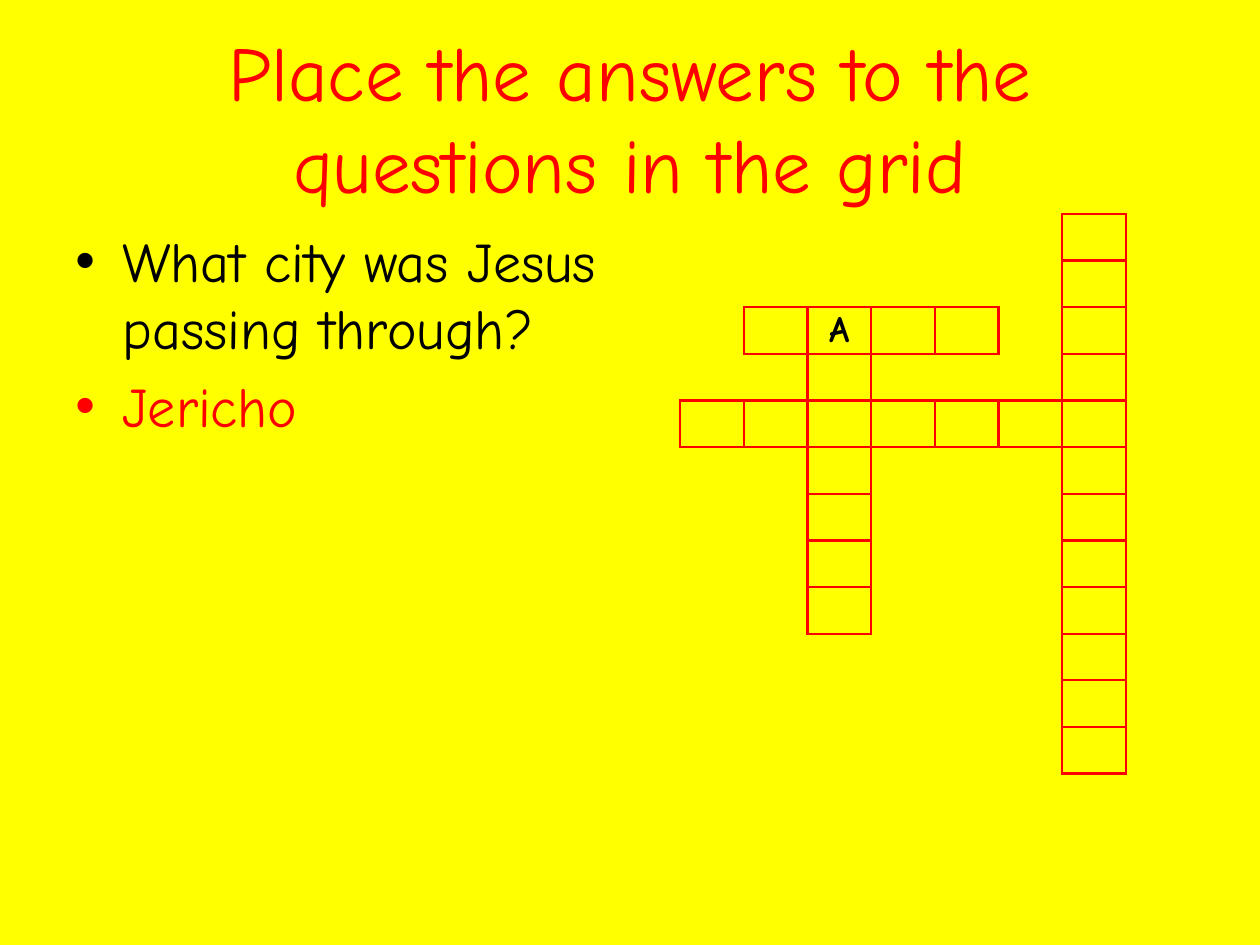
from lxml.etree import SubElement
from pptx import Presentation
from pptx.dml.color import RGBColor
from pptx.enum.text import MSO_ANCHOR, MSO_AUTO_SIZE, PP_ALIGN
from pptx.oxml.ns import qn
from pptx.util import Emu, Pt

EMU_PER_PX = 914400 / 126
YELLOW, RED, BLACK = "FFFF00", "FF0000", "000000"
ROWS, COLS = 12, 7
# Each word: first row, first column, row step, column step, length
WORDS = [(2, 1, 0, 1, 4), (4, 0, 0, 1, 7), (2, 2, 1, 0, 7), (0, 6, 1, 0, 12)]
LETTERS = {(2, 2): "A"}
SIDES = {"a:lnL": (0, -1), "a:lnR": (0, 1), "a:lnT": (-1, 0), "a:lnB": (1, 0)}


def px(n):
    return Emu(round(n * EMU_PER_PX))


def color(value):
    return RGBColor.from_string(value)


def apply(obj, values):
    for name, value in values.items():
        setattr(obj, name, value)


class SlideBuilder:
    font = "Comic Neue"

    def __init__(self, prs, background):
        self.s = prs.slides.add_slide(prs.slide_layouts[5])
        fill = self.s.background.fill
        fill.solid()
        fill.fore_color.rgb = color(background)

    def add_text(self, p, text, size, ink, bold=False):
        r = p.add_run()
        r.text = text
        apply(r.font, {"name": self.font, "size": Pt(size), "bold": bold})
        r.font.color.rgb = color(ink)

    def place(self, sp, box):
        apply(sp, dict(zip(("left", "top", "width", "height"), map(px, box))))

    def title(self, box, text, size, ink):
        sp = self.s.shapes.title
        self.place(sp, box)
        tf = sp.text_frame
        apply(tf, {"word_wrap": True, "auto_size": MSO_AUTO_SIZE.NONE,
                   "vertical_anchor": MSO_ANCHOR.MIDDLE})
        p = tf.paragraphs[0]
        p.alignment = PP_ALIGN.CENTER
        self.add_text(p, text, size, ink)

    def bullets(self, box, items, size, indent):
        tf = self.s.shapes.add_textbox(*map(px, box)).text_frame
        tf.word_wrap = True
        for i, (text, ink) in enumerate(items):
            p = tf.add_paragraph() if i else tf.paragraphs[0]
            p.space_before = Pt(size * 0.2)
            self.add_text(p, text, size, ink)
            pPr = p._p.get_or_add_pPr()
            pPr.set("marL", str(px(indent)))
            pPr.set("indent", str(-px(indent)))
            SubElement(pPr, qn("a:buFont"), typeface="Arial")
            SubElement(pPr, qn("a:buChar"), char="•")

    def border(self, cell, side, ink):
        """Draw one side of a cell, or hide it when ink is None."""
        ln = SubElement(cell._tc.get_or_add_tcPr(), qn(side), w=str(Pt(1.5)))
        if ink:
            fill = SubElement(ln, qn("a:solidFill"))
            SubElement(fill, qn("a:srgbClr"), val=ink)
        else:
            SubElement(ln, qn("a:noFill"))

    def crossword(self, box, words, letters, size, ink, line):
        """Outline every square that a word covers; leave the rest open."""
        squares = {(row + dr * i, col + dc * i)
                   for row, col, dr, dc, length in words for i in range(length)}
        table = self.s.shapes.add_table(ROWS, COLS, *map(px, box)).table
        apply(table, {"first_row": False, "horz_banding": False})
        for col in table.columns:
            col.width = px(box[2] / COLS)
        for row in table.rows:
            row.height = px(box[3] / ROWS)
        for r in range(ROWS):
            for c in range(COLS):
                cell = table.cell(r, c)
                apply(cell, {"margin_left": 0, "margin_right": 0, "margin_top": 0,
                             "margin_bottom": 0, "vertical_anchor": MSO_ANCHOR.MIDDLE})
                for side, (dr, dc) in SIDES.items():
                    shown = squares & {(r, c), (r + dr, c + dc)}
                    self.border(cell, side, line if shown else None)
                cell.fill.background()
                if (r, c) in letters:
                    p = cell.text_frame.paragraphs[0]
                    p.alignment = PP_ALIGN.CENTER
                    self.add_text(p, letters[r, c], size, ink, bold=True)


def main():
    prs = Presentation()
    apply(prs, {"slide_width": px(1260), "slide_height": px(945)})
    slide = SlideBuilder(prs, YELLOW)
    slide.title((63, 38, 1134, 158),
                "Place the answers to the questions in the grid", 44, RED)
    slide.bullets((63, 220, 636, 624),
                  [("What city was Jesus passing through?", BLACK), ("Jericho", RED)],
                  size=32, indent=47)
    slide.crossword((680, 214, 446, 560), WORDS, LETTERS, 21, BLACK, RED)
    prs.save("out.pptx")


if __name__ == "__main__":
    main()
